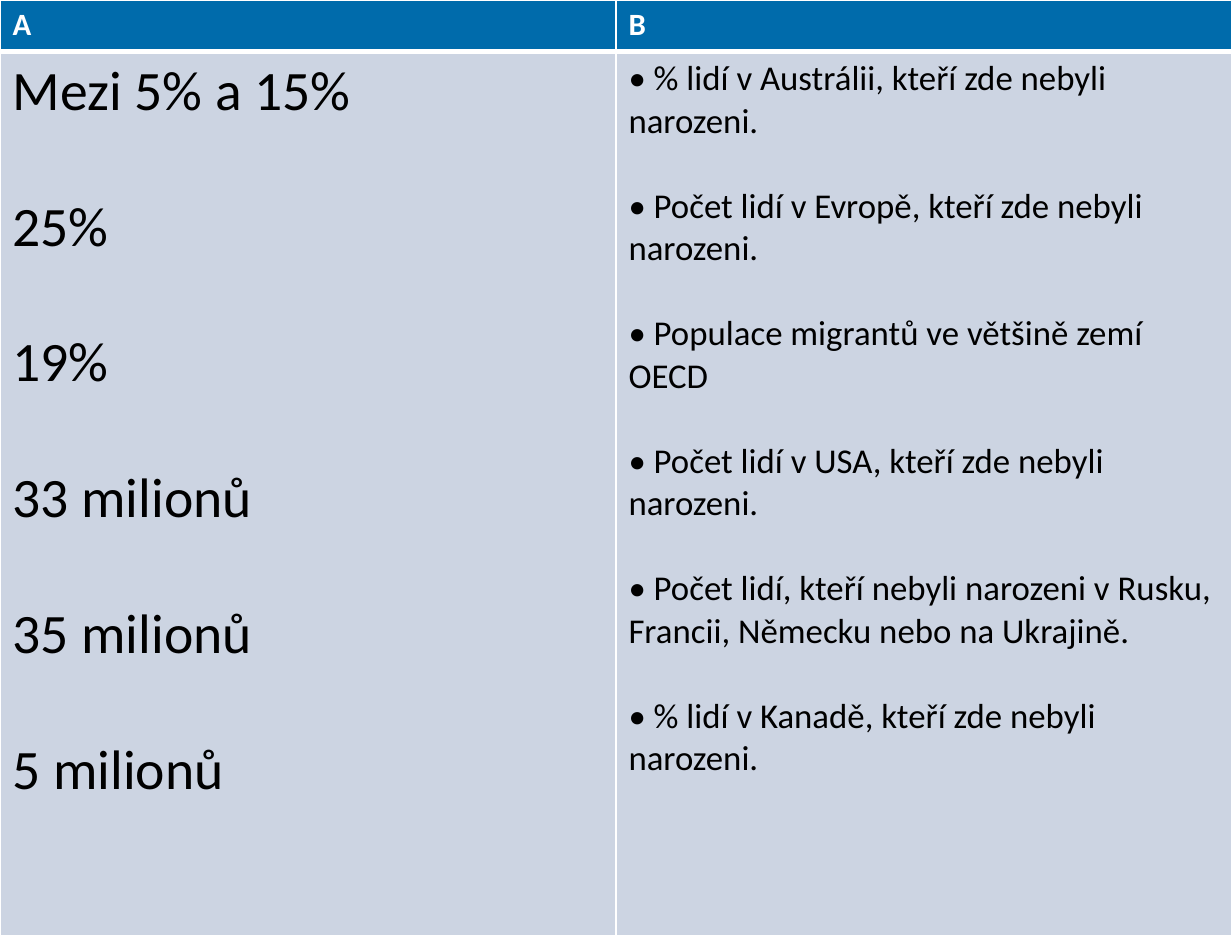
from lxml import etree
from pptx import Presentation
from pptx.dml.color import RGBColor
from pptx.oxml import ns
from pptx.util import Cm, Pt

FONT = "Calibri"
WHITE, BLACK, BLUE, GREY = "FFFFFF", "000000", "006BAB", "CCD4E2"
LINE = 1.22  # line height of the font, in ems

AMOUNTS = ["Mezi 5% a 15%", "25%", "19%", "33 milionů", "35 milionů", "5 milionů"]
FACTS = [
    "• % lidí v Austrálii, kteří zde nebyli narozeni.",
    "• Počet lidí v Evropě, kteří zde nebyli narozeni.",
    "• Populace migrantů ve většině zemí OECD",
    "• Počet lidí v USA, kteří zde nebyli narozeni.",
    "• Počet lidí, kteří nebyli narozeni v Rusku, Francii, Německu nebo na Ukrajině.",
    "• % lidí v Kanadě, kteří zde nebyli narozeni.",
]


def color(code):
    return RGBColor.from_string(code)


def border(cell, top, bottom):
    """Draw white borders; they must come before the fill."""
    props = cell._tc.get_or_add_tcPr()
    sides = {"lnL": 1, "lnR": 1, "lnT": top, "lnB": bottom}
    for place, (side, width) in enumerate(sides.items()):
        line = etree.Element(ns.qn("a:" + side), w=str(Pt(width)))
        fill = etree.SubElement(line, ns.qn("a:solidFill"))
        etree.SubElement(fill, ns.qn("a:srgbClr"), val=WHITE)
        props.insert(place, line)


def fill_cell(cell, lines, size, ink, back, bold=False):
    """Write the lines, with one line's height between them."""
    cell.fill.solid()
    cell.fill.fore_color.rgb = color(back)
    frame = cell.text_frame
    for i, words in enumerate(lines):
        par = frame.add_paragraph() if i else frame.paragraphs[0]
        par.text = words
        if i:
            par.space_before = Pt(round(size * LINE, 1))
        par.font.name = FONT
        par.font.size = Pt(size)
        par.font.bold = bold
        par.font.color.rgb = color(ink)


def add_grid(slide, left, top, width, height):
    table = slide.shapes.add_table(2, 2, left, top, width, height).table
    table.horz_banding = False
    head = Cm(1.04)
    table.rows[0].height = head
    table.rows[1].height = height - head

    columns = [("A", AMOUNTS, 32), ("B", FACTS, 20)]
    for c, (title, lines, size) in enumerate(columns):
        table.columns[c].width = width // 2
        # Header
        cell = table.cell(0, c)
        fill_cell(cell, [title], 17.8, WHITE, BLUE, bold=True)
        border(cell, top=1, bottom=3)
        # Body
        cell = table.cell(1, c)
        fill_cell(cell, lines, size, BLACK, GREY)
        border(cell, top=3, bottom=1)


def main():
    deck = Presentation()
    deck.slide_width, deck.slide_height = Cm(25), Cm(19)
    slide = deck.slides.add_slide(deck.slide_layouts[6])
    add_grid(slide, 0, 0, deck.slide_width, deck.slide_height)
    deck.save("out.pptx")


if __name__ == "__main__":
    main()
